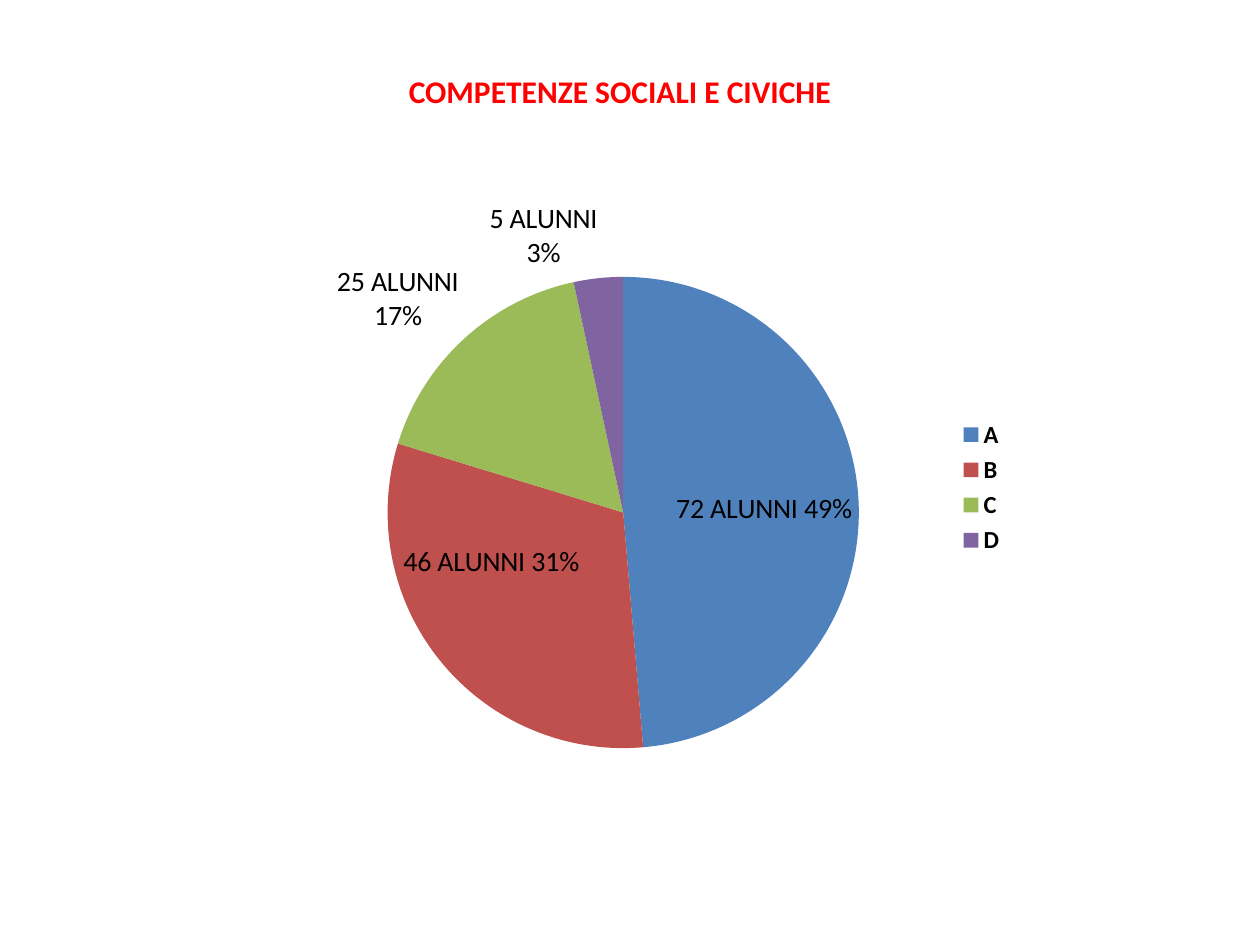
import pptx
import pptx.util
import pptx.chart.data
import pptx.dml.color
import pptx.enum.chart
import pptx.enum.text
import pptx.oxml
import pptx.oxml.ns

PX = 914400 // 126
SIZE = (1260, 945)
TITLE = "COMPETENZE SOCIALI E CIVICHE"
TITLE_BOX = (273, 66, 694, 50)
CHART_BOX = (194, 185, 824, 605)
PIE_BOX = (388, 277, 471, 471)
SLICES = [
    ("A", 72, "4F81BD", "72 ALUNNI 49%", "CENTER", (23, 2)),
    ("B", 46, "C0504D", "46 ALUNNI 31%", "CENTER", (-40, -24)),
    ("C", 25, "9BBB59", "25 ALUNNI 17%", "OUTSIDE_END", None),
    ("D", 5, "8064A2", "5 ALUNNI\n3%", "OUTSIDE_END", None),
]
TITLE_FONT = {"name": "Calibri", "size": 18, "bold": True, "color": "FF0000"}
CHART_FONT = {"name": "Calibri", "size": 10, "color": "000000"}
LABEL_FONT = {"name": "Calibri", "size": 16, "bold": False, "color": "000000"}
LEGEND_FONT = {"name": "Calibri", "size": 14, "bold": True, "color": "000000"}


def rgb(value):
    return pptx.dml.color.RGBColor.from_string(value)


def set_font(font, values):
    for name, value in values.items():
        if name == "color":
            font.color.rgb = rgb(value)
        else:
            setattr(font, name, pptx.util.Pt(value) if name == "size" else value)


def layout(**values):
    items = "".join(f'<c:{k} val="{v}"/>' for k, v in values.items())
    return pptx.oxml.parse_xml(
        f'<c:layout {pptx.oxml.ns.nsdecls("c")}>'
        f"<c:manualLayout>{items}</c:manualLayout></c:layout>"
    )


def add_title(s):
    sp = s.shapes.add_textbox(*(v * PX for v in TITLE_BOX))
    tf = sp.text_frame
    tf.word_wrap = True
    tf.auto_size = pptx.enum.text.MSO_AUTO_SIZE.SHAPE_TO_FIT_TEXT
    p = tf.paragraphs[0]
    p.alignment = pptx.enum.text.PP_ALIGN.CENTER
    r = p.add_run()
    r.text = TITLE
    set_font(r.font, TITLE_FONT)


def add_pie(s):
    data = pptx.chart.data.CategoryChartData()
    data.categories = [row[0] for row in SLICES]
    data.add_series("Series 1", [row[1] for row in SLICES])
    chart = s.shapes.add_chart(
        pptx.enum.chart.XL_CHART_TYPE.PIE, *(v * PX for v in CHART_BOX), data
    ).chart
    set_font(chart.font, CHART_FONT)
    chart.has_title = False
    chart.has_legend = True
    chart.legend.position = pptx.enum.chart.XL_LEGEND_POSITION.RIGHT
    chart.legend.include_in_layout = False
    set_font(chart.legend.font, LEGEND_FONT)

    left, top, width, height = CHART_BOX
    x, y, w, h = PIE_BOX
    plot = chart.plots[0]
    plot.vary_by_categories = True
    area = chart.element.find(".//" + pptx.oxml.ns.qn("c:plotArea"))
    for old in area.findall(pptx.oxml.ns.qn("c:layout")):
        area.remove(old)
    area.insert(0, layout(
        layoutTarget="inner", xMode="edge", yMode="edge",
        x=round((x - left) / width, 3), y=round((y - top) / height, 3),
        w=round(w / width, 3), h=round(h / height, 3),
    ))

    series = plot.series[0]
    labels = series.data_labels
    labels.show_value = True
    labels.show_percentage = True
    set_font(labels.font, LABEL_FONT)
    for i, (_, _, color, text, position, shift) in enumerate(SLICES):
        point = series.points[i]
        point.format.fill.solid()
        point.format.fill.fore_color.rgb = rgb(color)
        label = point.data_label
        label.text_frame.text = text
        for p in label.text_frame.paragraphs:
            for r in p.runs:
                set_font(r.font, LABEL_FONT)
        label.position = getattr(pptx.enum.chart.XL_LABEL_POSITION, position)
        if shift:
            dx, dy = shift
            node = labels._element.findall(pptx.oxml.ns.qn("c:dLbl"))[i]
            node.insert(1, layout(x=round(dx / width, 3), y=round(dy / height, 3)))


def main():
    prs = pptx.Presentation()
    prs.slide_width, prs.slide_height = (v * PX for v in SIZE)
    s = prs.slides.add_slide(prs.slide_layouts[6])
    add_title(s)
    add_pie(s)
    prs.save("out.pptx")


if __name__ == "__main__":
    main()
